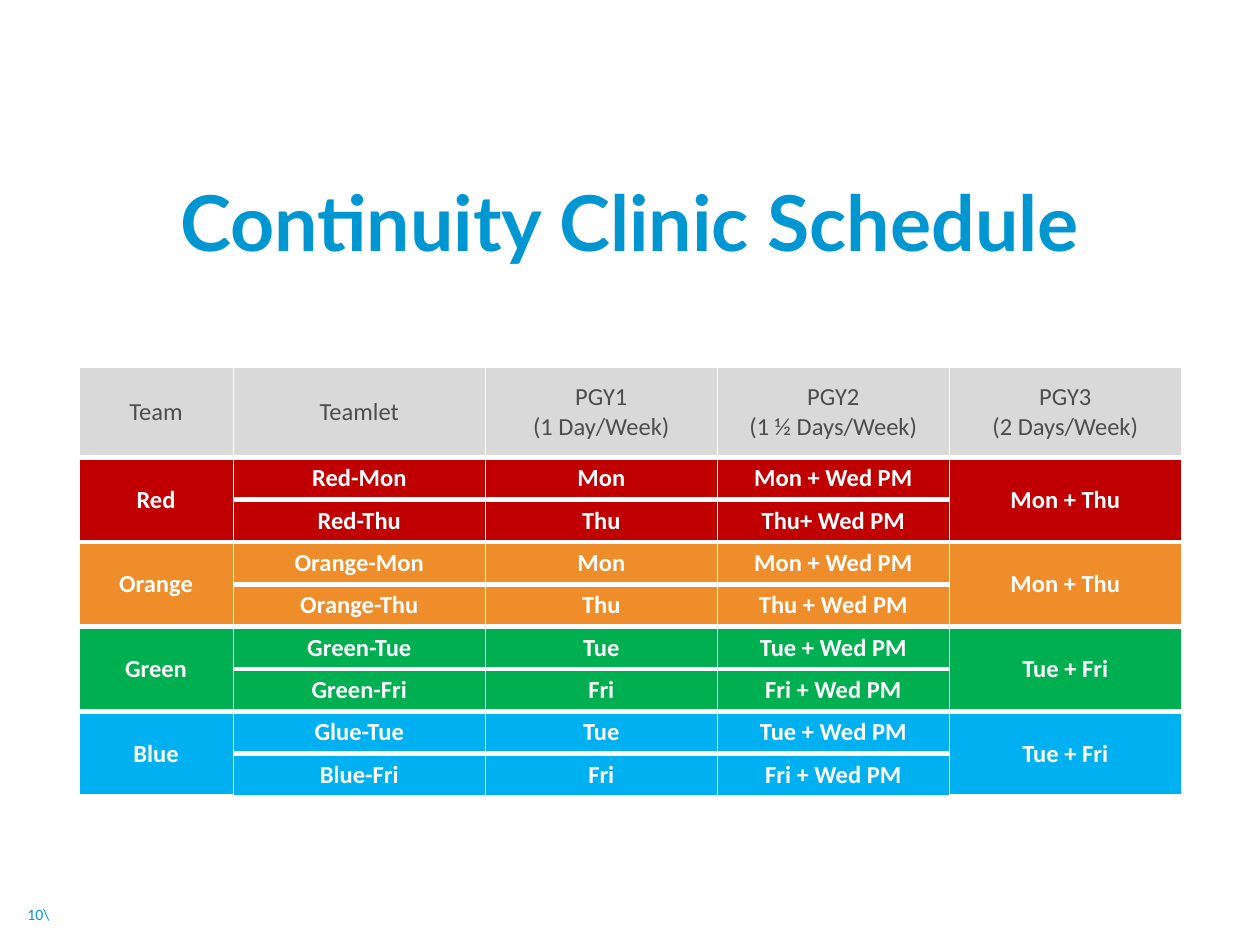
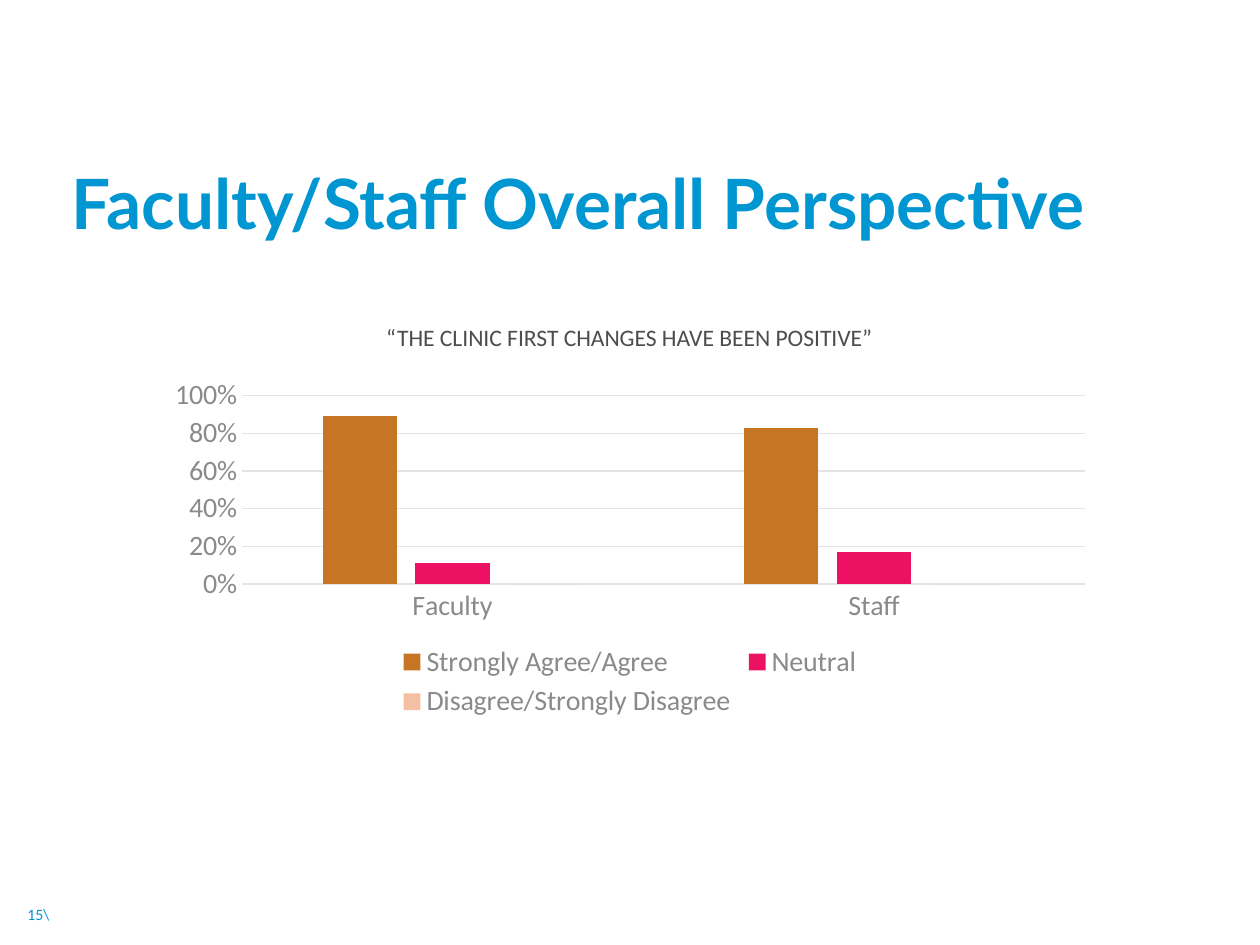
from lxml import etree
from pptx import Presentation
from pptx.chart.data import CategoryChartData
from pptx.dml.color import RGBColor
from pptx.enum.chart import XL_CHART_TYPE as ChartType, XL_LEGEND_POSITION as LegendPosition, XL_TICK_MARK as TickMark
from pptx.enum.text import MSO_ANCHOR as Anchor, PP_ALIGN as Align
from pptx.oxml.ns import qn
from pptx.util import Pt

COLORS = {
    "title": "0096D2", "text": "4D4D4F", "axis": "8A8A8D", "grid": "E4E4E5",
    "white": "FFFFFF", "header": "D9D9D9",
    "Red": "C00000", "Orange": "EF8D2B", "Green": "00B050", "Blue": "00B0F0",
    "agree": "C67524", "neutral": "ED1163", "disagree": "F5BFA4",
}
HEADING_FONT, BODY_FONT = "Lato", "Calibri"


def rgb(name):
    return RGBColor.from_string(COLORS[name])


def write(frame, text, size, color, align=Align.CENTER, bold=False, font=BODY_FONT, spacing=None):
    for index, line in enumerate(text.split("\n")):
        paragraph = frame.add_paragraph() if index else frame.paragraphs[0]
        paragraph.alignment = align
        paragraph.line_spacing = spacing
        run = paragraph.add_run()
        run.text = line
        run.font.name, run.font.size, run.font.bold = font, Pt(size), bold
        run.font.color.rgb = rgb(color)


presentation = Presentation()
presentation.slide_width, presentation.slide_height = Pt(720), Pt(540)

# Title and page number of each slide: (title, size, box, page)
pages = [
    ("Continuity Clinic Schedule", 44, (0, 77, 720, 104.4), "10\\"),
    ("Faculty/Staff Overall Perspective", 39.6, (33.8, 97.2, 593.3, 41.8), "15\\"),
]
slides = []
for title, size, title_box, page in pages:
    slide = presentation.slides.add_slide(presentation.slide_layouts[6])
    slides.append(slide)
    number = dict(size=9, color="title", align=Align.RIGHT)
    heading = dict(size=size, color="title", bold=True, font=HEADING_FONT, spacing=0.9)
    for text, box, style in [(page, (0, 511.9, 35.3, 21.6), number), (title, title_box, heading)]:
        frame = slide.shapes.add_textbox(*map(Pt, box)).text_frame
        frame.word_wrap = True
        frame.vertical_anchor = Anchor.MIDDLE
        if text == title:
            frame.margin_left = frame.margin_right = 0
        write(frame, text, **style)
schedule_slide, survey_slide = slides

# Clinic schedule: a header and two teamlets per team
header = ["Team", "Teamlet", "PGY1\n(1 Day/Week)", "PGY2\n(1 ½ Days/Week)", "PGY3\n(2 Days/Week)"]
teams = [
    ("Red", "Mon + Thu", [("Red-Mon", "Mon", "Mon + Wed PM"), ("Red-Thu", "Thu", "Thu+ Wed PM")]),
    ("Orange", "Mon + Thu", [("Orange-Mon", "Mon", "Mon + Wed PM"), ("Orange-Thu", "Thu", "Thu + Wed PM")]),
    ("Green", "Tue + Fri", [("Green-Tue", "Tue", "Tue + Wed PM"), ("Green-Fri", "Fri", "Fri + Wed PM")]),
    ("Blue", "Tue + Fri", [("Glue-Tue", "Tue", "Tue + Wed PM"), ("Blue-Fri", "Fri", "Fri + Wed PM")]),
]
rows = [("header", header)]
for team, third_year, teamlets in teams:
    first, second = teamlets
    rows.append((team, [team, *first, third_year]))
    rows.append((team, ["", *second, ""]))

widths = [88.3, 144, 132.6, 132.6, 132.6]
heights = [51.6] + [24.2] * (len(rows) - 1)
table = schedule_slide.shapes.add_table(
    len(rows), len(widths), Pt(45), Pt(209.8), Pt(sum(widths)), Pt(sum(heights))).table
table.first_row = table.horz_banding = False
for column, width in zip(table.columns, widths):
    column.width = Pt(width)
for row, height in zip(table.rows, heights):
    row.height = Pt(height)

for row_index, (fill, texts) in enumerate(rows):
    is_header = row_index == 0
    for column_index, text in enumerate(texts):
        cell = table.cell(row_index, column_index)
        cell.fill.solid()
        cell.fill.fore_color.rgb = rgb(fill)
        cell.vertical_anchor = Anchor.MIDDLE
        cell.margin_left = cell.margin_right = Pt(4.5)
        cell.margin_top = cell.margin_bottom = 0
        if text:
            write(cell.text_frame, text, 14, "text" if is_header else "white", bold=not is_header)
        # White borders, thick between rows
        top = 1 if is_header else 3
        bottom = 1 if row_index == len(rows) - 1 else 3
        properties = cell._tc.get_or_add_tcPr()
        for position, (side, weight) in enumerate([("L", 1), ("R", 1), ("T", top), ("B", bottom)]):
            line = etree.Element(qn(f"a:ln{side}"), w=str(Pt(weight)))
            solid = etree.SubElement(line, qn("a:solidFill"))
            etree.SubElement(solid, qn("a:srgbClr"), val=COLORS["white"])
            properties.insert(position, line)

for row_index in range(1, len(rows), 2):
    for column_index in (0, len(widths) - 1):
        table.cell(row_index, column_index).merge(table.cell(row_index + 1, column_index))

# Survey chart
series_list = [
    ("Strongly Agree/Agree", (0.89, 0.83), "agree"),
    ("Neutral", (0.11, 0.17), "neutral"),
    ("Disagree/Strongly Disagree", (0, 0), "disagree"),
]
data = CategoryChartData(number_format="0%")
data.categories = ["Faculty", "Staff"]
for name, values, _ in series_list:
    data.add_series(name, values)
chart = survey_slide.shapes.add_chart(
    ChartType.COLUMN_CLUSTERED, Pt(89.3), Pt(212.4), Pt(541.4), Pt(201.6), data).chart
chart.has_title = False
chart.has_legend = True
chart.legend.position = LegendPosition.BOTTOM
chart.legend.include_in_layout = False

plot = chart.plots[0]
plot.gap_width, plot.overlap, plot.vary_by_categories = 219, -25, False
for series, (_, _, color) in zip(plot.series, series_list):
    series.format.fill.solid()
    series.format.fill.fore_color.rgb = rgb(color)

category_axis, value_axis = chart.category_axis, chart.value_axis
for axis in (category_axis, value_axis):
    axis.major_tick_mark = axis.minor_tick_mark = TickMark.NONE
value_axis.minimum_scale, value_axis.maximum_scale, value_axis.major_unit = 0, 1, 0.2
value_axis.tick_labels.number_format = "0%"
value_axis.tick_labels.number_format_is_linked = False
value_axis.has_major_gridlines = True
value_axis.format.line.fill.background()
for line in (category_axis.format.line, value_axis.major_gridlines.format.line):
    line.color.rgb, line.width = rgb("grid"), Pt(0.75)
for font, color in [(chart.font, "text"), (chart.legend.font, "axis"),
                    (category_axis.tick_labels.font, "axis"), (value_axis.tick_labels.font, "axis")]:
    font.name, font.size, font.color.rgb = BODY_FONT, Pt(16), rgb(color)

# Statement above the chart
frame = survey_slide.shapes.add_textbox(Pt(95), Pt(180.7), Pt(529.2), Pt(23.8)).text_frame
frame.word_wrap = True
frame.vertical_anchor = Anchor.MIDDLE
write(frame, "“THE CLINIC FIRST CHANGES HAVE BEEN POSITIVE”", 13.5, "text")

presentation.save("out.pptx")
